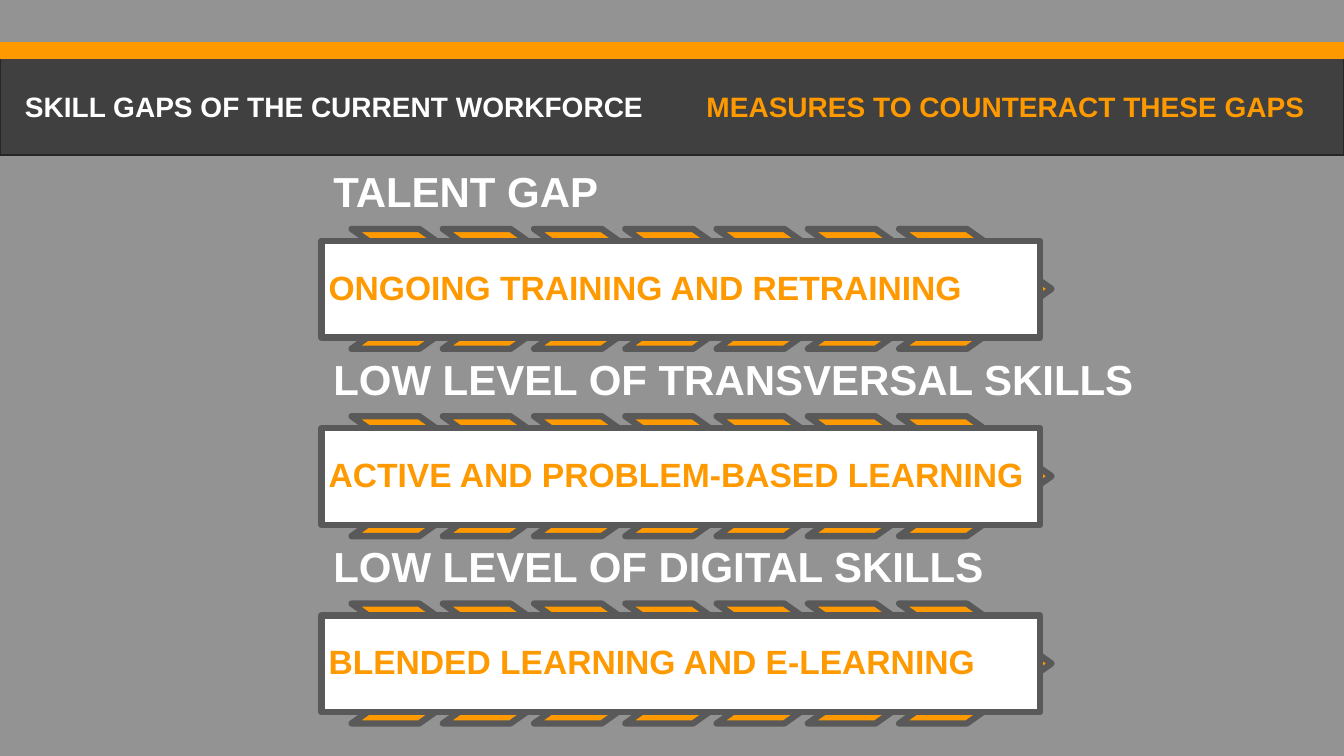
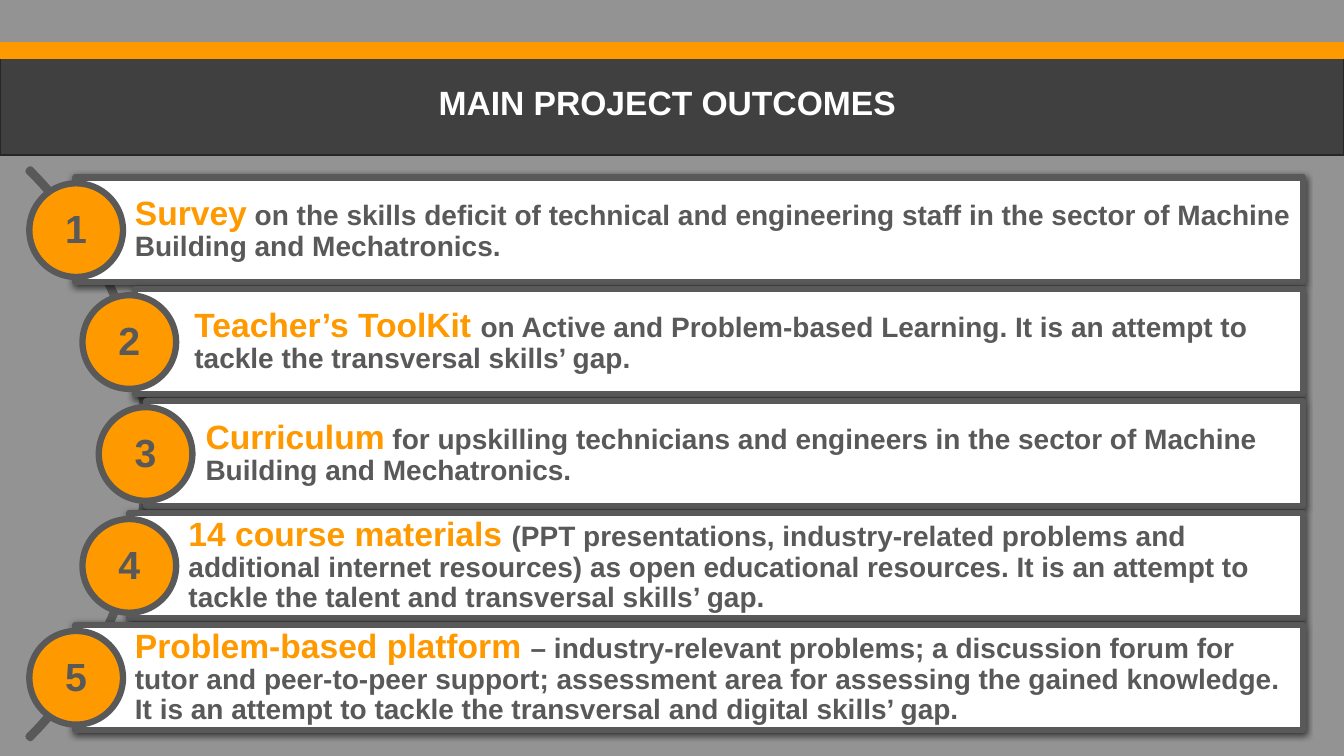
from lxml import etree
from pptx import Presentation
from pptx import util as u
from pptx.dml.color import RGBColor
from pptx.enum import shapes, text
from pptx.oxml import ns

GRAY, BAND, BAND_EDGE = "939393", "404040", "262626"
ORANGE, WHITE, DARK = "FF9900", "FFFFFF", "595959"
WIDTH, HEIGHT = 33.87, 19.05
SHAPE, ALIGN, ANCHOR = shapes.MSO_SHAPE, text.PP_ALIGN, text.MSO_ANCHOR

GAPS = [
    ("TALENT GAP", "ONGOING TRAINING AND RETRAINING"),
    ("LOW LEVEL OF TRANSVERSAL SKILLS", "ACTIVE AND PROBLEM-BASED LEARNING"),
    ("LOW LEVEL OF DIGITAL SKILLS", "BLENDED LEARNING AND E-LEARNING"),
]

OUTCOMES = [
    (1.9, 0.74, "Survey",
     " on the skills deficit of technical and engineering staff in the sector"
     " of Machine Building and Mechatronics."),
    (3.4, 2.08, "Teacher’s ToolKit ",
     "on Active and Problem-based Learning. It is an attempt to tackle the"
     " transversal skills’ gap."),
    (3.68, 2.49, "Curriculum",
     " for upskilling technicians and engineers in the sector of Machine"
     " Building and Mechatronics."),
    (3.25, 2.08, "14 course materials ",
     "(PPT presentations, industry-related problems and additional internet"
     " resources) as open educational resources. It is an attempt to tackle"
     " the talent and transversal skills’ gap."),
    (1.9, 0.74, "Problem-based platform ",
     "– industry-relevant problems; a discussion forum for tutor and"
     " peer-to-peer support; assessment area for assessing the gained"
     " knowledge. It is an attempt to tackle the transversal and digital"
     " skills’ gap."),
]


def rgb(value):
    return RGBColor.from_string(value)


class Deck:
    font = "Arial"
    outline = 4.5

    def __init__(self):
        self.prs = Presentation()
        self.prs.slide_width, self.prs.slide_height = u.Cm(WIDTH), u.Cm(HEIGHT)
        fill = self.prs.slide_master.background.fill
        fill.solid()
        fill.fore_color.rgb = rgb(GRAY)
        self.layout = self.prs.slide_layouts[5]
        self.s = None

    def new_slide(self):
        self.s = self.prs.slides.add_slide(self.layout)

    def share_bands(self):
        bands = [
            self.shape(SHAPE.RECTANGLE, 0, 1.07, WIDTH, 2.84, BAND, BAND_EDGE, 1),
            self.shape(SHAPE.RECTANGLE, 0, 1.07, WIDTH, 0.41, ORANGE, ORANGE, 1),
        ]
        for i, sp in enumerate(bands):
            self.layout.shapes.element.insert(2 + i, sp.element)

    def shape(self, kind, x, y, w, h, fill=None, line=DARK, weight=outline):
        sp = self.s.shapes.add_shape(kind, u.Cm(x), u.Cm(y), u.Cm(w), u.Cm(h))
        if fill:
            sp.fill.solid()
            sp.fill.fore_color.rgb = rgb(fill)
        else:
            sp.fill.background()
        sp.line.color.rgb = rgb(line)
        sp.line.width = u.Pt(weight)
        sp.shadow.inherit = False
        return sp

    def drop_shadow(self, sp):
        effects = sp.element.spPr.find(ns.qn("a:effectLst"))
        shadow = etree.SubElement(effects, ns.qn("a:outerShdw"), blurRad="57150",
                                  dist="19050", dir="5400000", rotWithShape="0")
        color = etree.SubElement(shadow, ns.qn("a:srgbClr"), val="000000")
        etree.SubElement(color, ns.qn("a:alpha"), val="63000")

    def set_text(self, sp, runs, align=ALIGN.LEFT, anchor=ANCHOR.MIDDLE,
                 insets=(0.25, 0.13, 0.25, 0.13), spacing=1.0):
        tf = sp.text_frame
        tf.word_wrap = True
        tf.auto_size = text.MSO_AUTO_SIZE.NONE
        tf.vertical_anchor = anchor
        tf.margin_left, tf.margin_top, tf.margin_right, tf.margin_bottom = map(u.Cm, insets)
        p = tf.paragraphs[0]
        p.alignment = align
        p.line_spacing = spacing
        for words, size, color in runs:
            r = p.add_run()
            r.text = words
            r.font.name = self.font
            r.font.size = u.Pt(size)
            r.font.bold = True
            r.font.color.rgb = rgb(color)

    def title(self, words, size, x, y, w, h):
        sp = self.s.shapes.title
        sp.left, sp.top, sp.width, sp.height = map(u.Cm, (x, y, w, h))
        self.set_text(sp, [(words, size, WHITE)], ALIGN.CENTER, ANCHOR.TOP)

    def textbox(self, words, size, color, x, y, w, h, **style):
        sp = self.s.shapes.add_textbox(u.Cm(x), u.Cm(y), u.Cm(w), u.Cm(h))
        self.set_text(sp, [(words, size, color)], **style)

    def chevrons(self, x, y, count=7, step=2.3):
        for i in range(count):
            sp = self.shape(SHAPE.CHEVRON, x + i * step, y, 3.84, 3.02, ORANGE)
            sp.adjustments[0] = 0.706

    def card(self, runs, x, y, w, h, indent=0.18, shadow=False):
        sp = self.shape(SHAPE.RECTANGLE, x, y, w, h, WHITE)
        if shadow:
            self.drop_shadow(sp)
        self.set_text(sp, runs, insets=(indent, 0.18, 0.18, 0.18), spacing=0.9)

    def badge(self, number, x, y):
        sp = self.shape(SHAPE.OVAL, x, y, 2.36, 2.36, ORANGE)
        self.set_text(sp, [(str(number), 28, DARK)], ALIGN.CENTER, insets=(0, 0, 0, 0.1))

    def arc(self, x, y, size):
        sp = self.shape(SHAPE.BLOCK_ARC, x, y, size, size)
        for i, value in enumerate((189, 27, 0.003)):
            sp.adjustments[i] = value


def skill_gaps(deck):
    deck.title("SKILL GAPS OF THE CURRENT WORKFORCE", 20, 0, 2.13, 16.84, 1.12)
    deck.textbox("MEASURES TO COUNTERACT THESE GAPS", 20, ORANGE, 17.25, 2.13, 16.18, 1.12,
                 align=ALIGN.CENTER, anchor=ANCHOR.TOP)
    for i, (gap, measure) in enumerate(GAPS):
        y = 4.27 + i * 4.72
        deck.textbox(gap, 30, WHITE, 8.1, y, 24.97, 1.5, anchor=ANCHOR.BOTTOM,
                     insets=(0.3, 0.3, 0.3, 0.3), spacing=0.9)
        deck.chevrons(8.86, y + 1.5)
        deck.card([(measure, 24, ORANGE)], 8.1, y + 1.8, 18.11, 2.44)


def outcomes(deck):
    deck.title("MAIN PROJECT OUTCOMES", 24, 6.3, 1.93, 21.03, 1.27)
    deck.arc(-16.54, 1.3, 20.27)
    for i, (card_x, badge_x, lead, detail) in enumerate(OUTCOMES):
        y = 4.47 + i * 2.82
        deck.card([(lead, 24, ORANGE), (detail, 20, DARK)], card_x, y,
                  32.84 - card_x, 2.64, indent=1.5, shadow=True)
        deck.badge(i + 1, badge_x, y + 0.15)


def main():
    deck = Deck()
    deck.new_slide()
    deck.share_bands()
    skill_gaps(deck)
    deck.new_slide()
    outcomes(deck)
    deck.prs.save("out.pptx")


if __name__ == "__main__":
    main()
